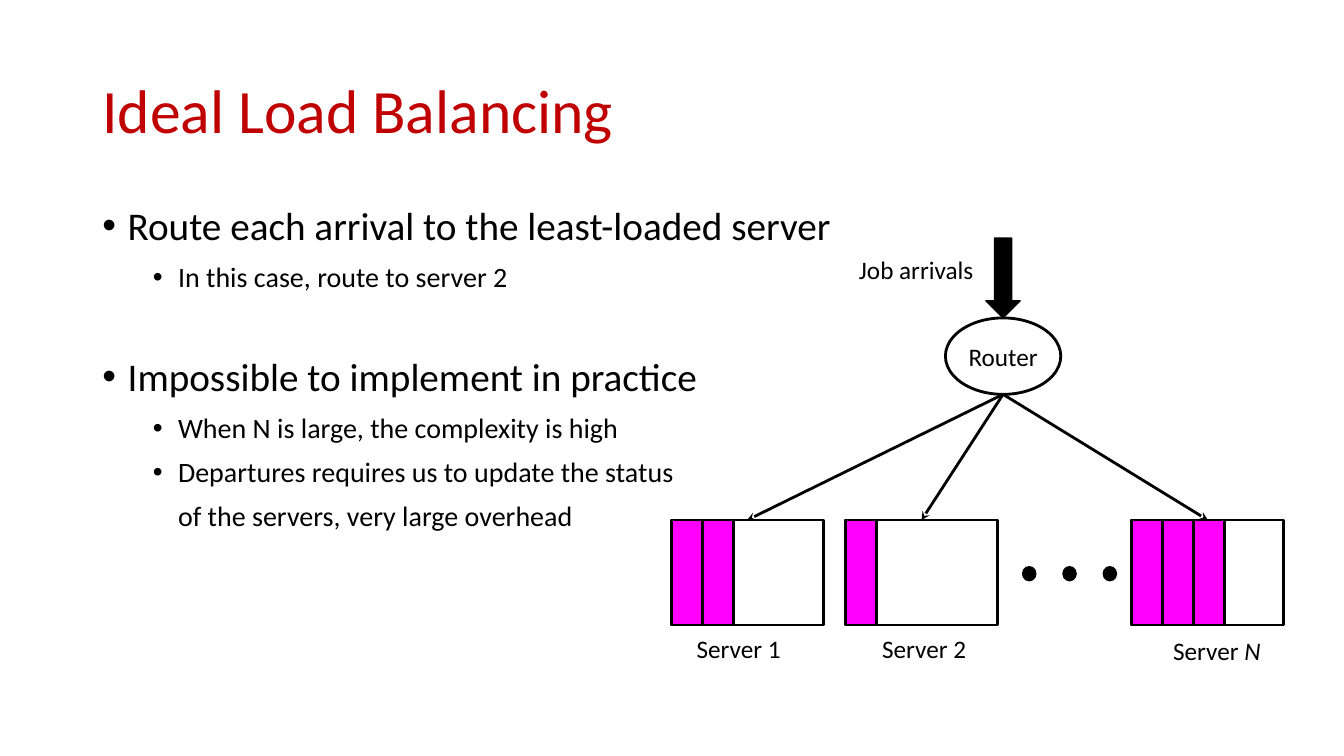
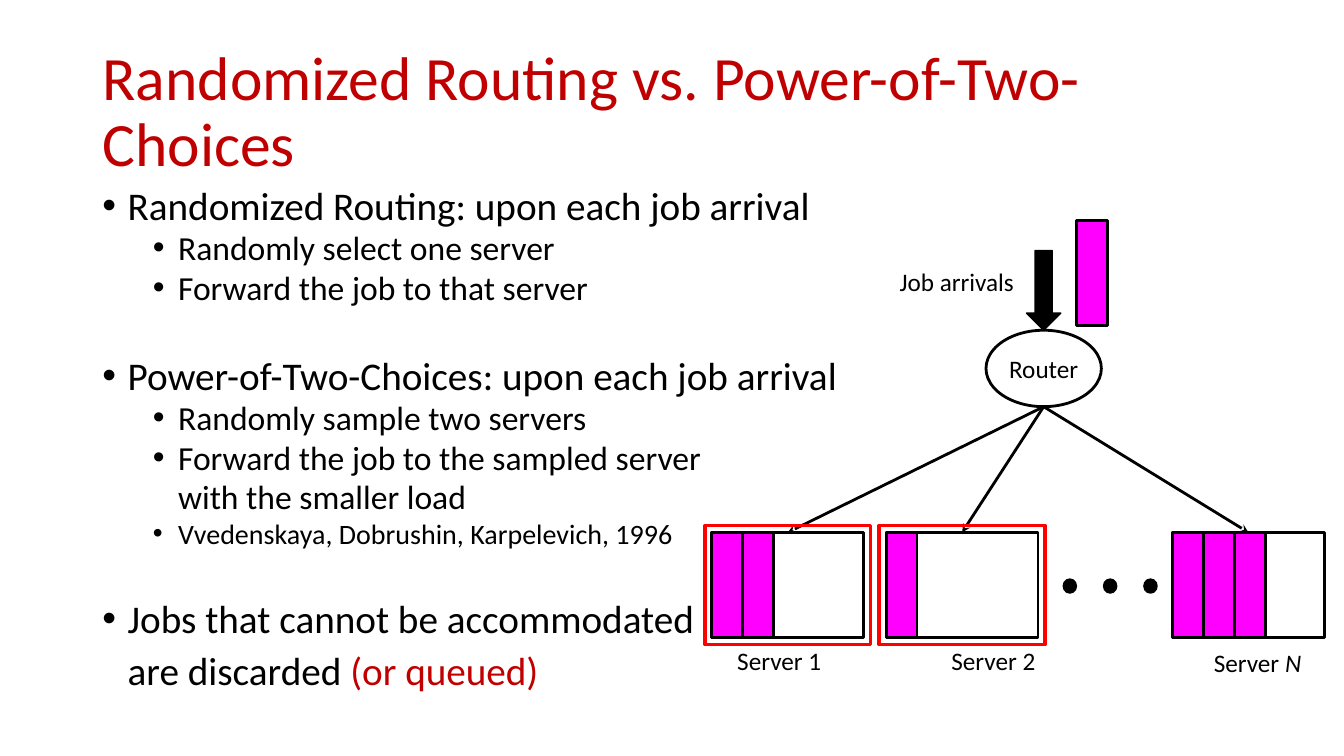
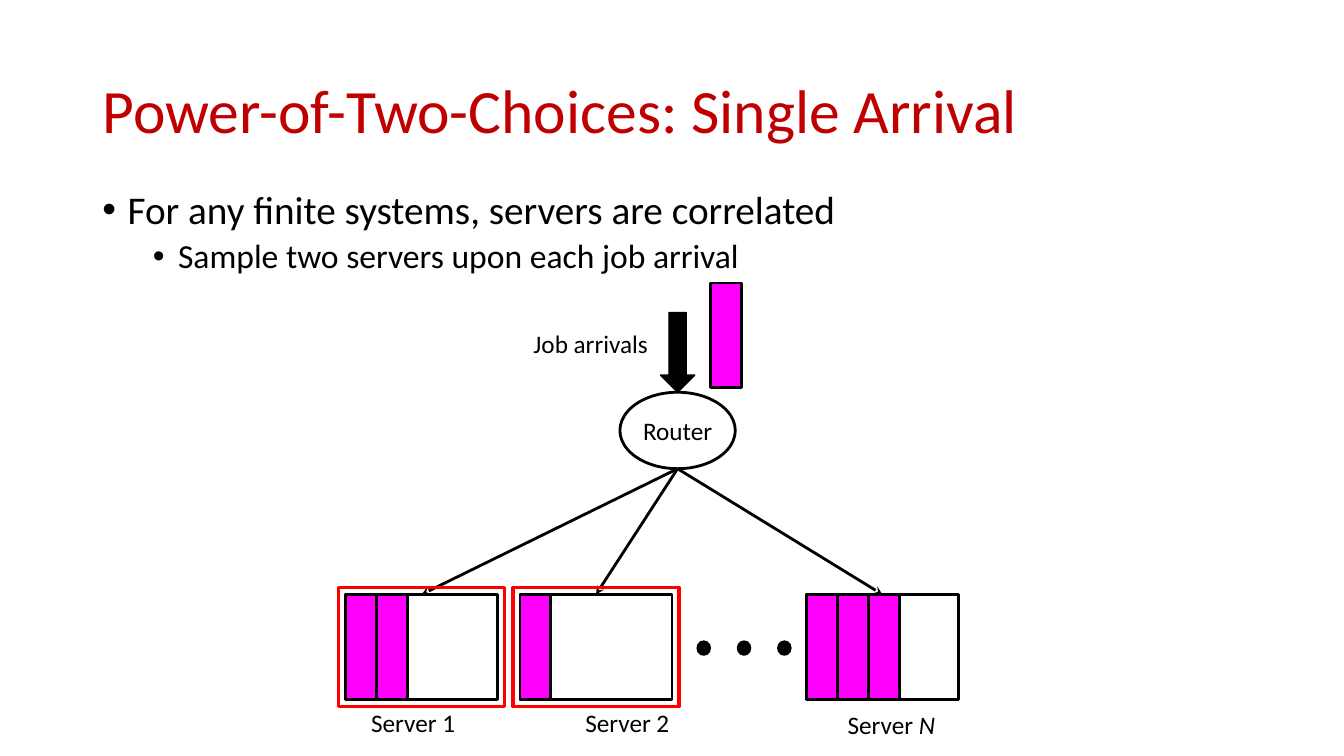
from dataclasses import dataclass

from lxml import etree
from pptx import Presentation
from pptx.dml.color import RGBColor
from pptx.enum.shapes import MSO_CONNECTOR, MSO_SHAPE
from pptx.enum.text import MSO_ANCHOR, MSO_AUTO_SIZE, PP_ALIGN
from pptx.oxml.ns import qn
from pptx.util import Pt

RECTANGLE, OVAL, DOWN_ARROW = MSO_SHAPE.RECTANGLE, MSO_SHAPE.OVAL, MSO_SHAPE.DOWN_ARROW
STRAIGHT = MSO_CONNECTOR.STRAIGHT
TOP, MIDDLE = MSO_ANCHOR.TOP, MSO_ANCHOR.MIDDLE
LEFT, CENTER = PP_ALIGN.LEFT, PP_ALIGN.CENTER
NO_AUTOFIT = MSO_AUTO_SIZE.NONE

COLORS = {"title": "C00000", "ink": "000000", "job": "FF00FF", "sampled": "FF0000"}
FONT = "Calibri"
TITLE_SIZE, LABEL_SIZE = 44, 18
MARGIN_X, CONTENT_WIDTH = 66, 828
INDENTS = (18, 54)
HANGING = 18

SERVER_WIDTH, SERVER_HEIGHT = 108.5, 75
SERVER_OFFSETS = (0, 124.5, 329)
SERVER_LOADS = (2, 1, 3)
JOB_WIDTH, JOB_STEP = 22, 22.2
ROUTER_WIDTH, ROUTER_HEIGHT = 82.4, 54.6
ROUTER_CENTER, ROUTER_TOP = 237, -144.4
ARROW_WIDTH, ARROW_HEIGHT = 24.5, 57
DOT_START, DOT_STEP, DOT_TOP = 251, 28.8, 33.3
FRAME_MARGIN = 5


@dataclass
class Point:
    """One paragraph of a list; gap is the space before it."""
    level: int
    size: float
    text: str
    gap: float
    bullet: bool = True
    accent: str = ""


def rgb(name):
    return RGBColor.from_string(COLORS[name])


def add_run(paragraph, text, size, color="ink", italic=None):
    run = paragraph.add_run()
    run.text = text
    run.font.name = FONT
    run.font.size = Pt(size)
    run.font.color.rgb = rgb(color)
    run.font.italic = italic


def place(shape, x, y, width, height):
    shape.left, shape.top, shape.width, shape.height = Pt(x), Pt(y), Pt(width), Pt(height)


def add_title(slide, text):
    title = slide.shapes.title
    place(title, MARGIN_X, 28.75, CONTENT_WIDTH, 104.4)
    title.text_frame.vertical_anchor = MIDDLE
    title.text_frame.auto_size = NO_AUTOFIT
    paragraph = title.text_frame.paragraphs[0]
    paragraph.alignment = LEFT
    paragraph.line_spacing = 0.9
    add_run(paragraph, text, TITLE_SIZE, "title")


def set_bullet(paragraph, level, bullet):
    properties = paragraph._p.get_or_add_pPr()
    properties.set("marL", str(Pt(INDENTS[level])))
    properties.set("indent", str(Pt(-HANGING if bullet else 0)))
    if bullet:
        etree.SubElement(properties, qn("a:buFont")).set("typeface", "Arial")
        etree.SubElement(properties, qn("a:buChar")).set("char", "•")
    else:
        etree.SubElement(properties, qn("a:buNone"))


def add_points(slide, top, height, line_spacing, points):
    body = slide.placeholders[1]
    place(body, MARGIN_X, top, CONTENT_WIDTH, height)
    frame = body.text_frame
    frame.auto_size = NO_AUTOFIT
    frame.vertical_anchor = TOP
    for index, point in enumerate(points):
        paragraph = frame.paragraphs[0] if index == 0 else frame.add_paragraph()
        paragraph.level = point.level
        paragraph.line_spacing = line_spacing
        paragraph.space_before = Pt(point.gap)
        set_bullet(paragraph, point.level, point.bullet)
        add_run(paragraph, point.text, point.size)
        if point.accent:
            add_run(paragraph, point.accent, point.size, "title")


def add_figure(slide, kind, x, y, width, height, fill=None, line="ink", weight=2):
    figure = slide.shapes.add_shape(kind, Pt(x), Pt(y), Pt(width), Pt(height))
    figure.shadow.inherit = False
    if fill:
        figure.fill.solid()
        figure.fill.fore_color.rgb = rgb(fill)
    else:
        figure.fill.background()
    figure.line.color.rgb = rgb(line)
    figure.line.width = Pt(weight)
    return figure


def add_label(slide, x, y, width, text, italic_text=""):
    label = slide.shapes.add_textbox(Pt(x), Pt(y), Pt(width), Pt(29))
    label.text_frame.word_wrap = False
    paragraph = label.text_frame.paragraphs[0]
    add_run(paragraph, text, LABEL_SIZE)
    if italic_text:
        add_run(paragraph, italic_text, LABEL_SIZE, italic=True)


def add_job(slide, x, y):
    add_figure(slide, RECTANGLE, x, y, JOB_WIDTH, SERVER_HEIGHT, fill="job")


def add_server(slide, x, y, load):
    server = add_figure(slide, RECTANGLE, x, y, SERVER_WIDTH, SERVER_HEIGHT)
    for position in range(load):
        add_job(slide, x + position * JOB_STEP, y)
    return server


def add_router(slide, center, top):
    router = add_figure(slide, OVAL, center - ROUTER_WIDTH / 2, top, ROUTER_WIDTH, ROUTER_HEIGHT)
    frame = router.text_frame
    frame.word_wrap = False
    frame.vertical_anchor = MIDDLE
    frame.margin_left = frame.margin_right = 0
    frame.paragraphs[0].alignment = CENTER
    add_run(frame.paragraphs[0], "Router", LABEL_SIZE)


def add_route(slide, x, y, server):
    route = slide.shapes.add_connector(STRAIGHT, Pt(x), Pt(y), Pt(x), Pt(y))
    route.end_connect(server, 0)
    route.line.color.rgb = rgb("ink")
    route.line.width = Pt(2)
    etree.SubElement(route.line._get_or_add_ln(), qn("a:tailEnd")).set("type", "stealth")
    etree.SubElement(route._element.spPr, qn("a:effectLst"))


def add_system(slide, x, y, sampled=False):
    """Router above its servers; x, y is the top left corner of server 1."""
    server_lefts = [x + offset for offset in SERVER_OFFSETS]
    servers = [add_server(slide, left, y, load)
               for left, load in zip(server_lefts, SERVER_LOADS)]
    for position in range(3):
        add_figure(slide, OVAL, x + DOT_START + position * DOT_STEP, y + DOT_TOP,
                   9.4, 10, fill="ink", weight=1)

    center, router_top = x + ROUTER_CENTER, y + ROUTER_TOP
    add_router(slide, center, router_top)
    for server in servers:
        add_route(slide, center, router_top + ROUTER_HEIGHT, server)
    add_figure(slide, DOWN_ARROW, center - ARROW_WIDTH / 2, router_top - ARROW_HEIGHT,
               ARROW_WIDTH, ARROW_HEIGHT, fill="ink", weight=1)
    add_label(slide, x + 127, y - 193.7, 97, "Job arrivals")

    label_top = y + SERVER_HEIGHT + 2
    add_label(slide, server_lefts[0] + 11, label_top, 75.6, "Server 1")
    add_label(slide, server_lefts[1] + (39.5 if sampled else 19), label_top, 75.6, "Server 2")
    add_label(slide, server_lefts[2] + 22.4, label_top + 1.5, 77.8, "Server ", "N")

    if sampled:
        add_job(slide, x + 260.6, y - 222.5)
        for left in server_lefts[:2]:
            add_figure(slide, RECTANGLE, left - FRAME_MARGIN, y - FRAME_MARGIN,
                       SERVER_WIDTH + 2 * FRAME_MARGIN, SERVER_HEIGHT + 2 * FRAME_MARGIN,
                       line="sampled", weight=2.5)


def add_content_slide(deck, title):
    slide = deck.slides.add_slide(deck.slide_layouts[1])
    add_title(slide, title)
    return slide


def add_ideal_slide(deck):
    slide = add_content_slide(deck, "Ideal Load Balancing")
    add_points(slide, 144, 343, 0.9, [
        Point(0, 28, "Route each arrival to the least-loaded server", 10),
        Point(1, 20, "In this case, route to server 2", 10),
        Point(0, 28, "Impossible to implement in practice", 46),
        Point(1, 20, "When N is large, the complexity is high", 10),
        Point(1, 20, "Departures requires us to update the status", 10),
        Point(1, 20, "of the servers, very large overhead", 10, bullet=False),
    ])
    add_system(slide, 479.5, 371.5)


def add_comparison_slide(deck):
    slide = add_content_slide(deck, "Randomized Routing vs. Power-of-Two-Choices")
    add_points(slide, 132.5, 376, 0.8, [
        Point(0, 28, "Randomized Routing: upon each job arrival", 10),
        Point(1, 24, "Randomly select one server", 5),
        Point(1, 24, "Forward the job to that server", 5),
        Point(0, 28, "Power-of-Two-Choices: upon each job arrival", 38.4),
        Point(1, 24, "Randomly sample two servers", 5),
        Point(1, 24, "Forward the job to the sampled server", 5),
        Point(1, 24, "with the smaller load", 5, bullet=False),
        Point(1, 20, "Vvedenskaya, Dobrushin, Karpelevich, 1996", 5),
        Point(0, 28, "Jobs that cannot be accommodated", 38.4),
        Point(0, 28, "are discarded ", 10, bullet=False, accent="(or queued)"),
    ])
    add_system(slide, 508.5, 380.3, sampled=True)


def add_single_arrival_slide(deck):
    slide = add_content_slide(deck, "Power-of-Two-Choices: Single Arrival")
    add_points(slide, 132.5, 376, 0.9, [
        Point(0, 28, "For any finite systems, servers are correlated", 10),
        Point(1, 24, "Sample two servers upon each job arrival", 5),
    ])
    add_system(slide, 247, 424.6, sampled=True)


def main():
    deck = Presentation()
    deck.slide_width, deck.slide_height = Pt(960), Pt(540)
    add_ideal_slide(deck)
    add_comparison_slide(deck)
    add_single_arrival_slide(deck)
    deck.save("out.pptx")


if __name__ == "__main__":
    main()
